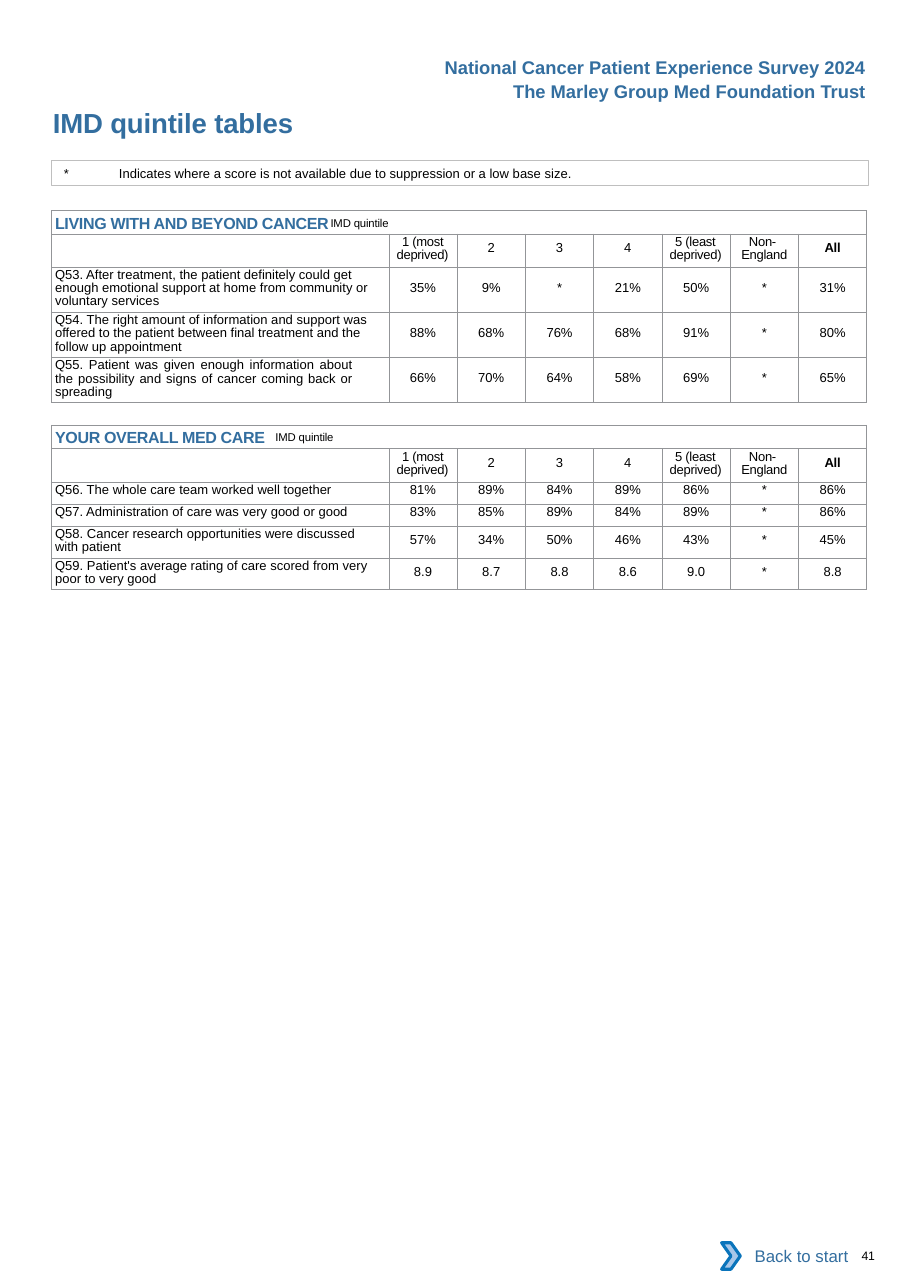
from dataclasses import dataclass

from lxml import etree
from pptx import Presentation
from pptx.dml.color import RGBColor
from pptx.enum.shapes import MSO_SHAPE
from pptx.enum.text import MSO_ANCHOR, MSO_AUTO_SIZE, PP_ALIGN
from pptx.oxml.ns import qn
from pptx.util import Inches, Pt

LEFT, CENTER, RIGHT, JUSTIFY = PP_ALIGN.LEFT, PP_ALIGN.CENTER, PP_ALIGN.RIGHT, PP_ALIGN.JUSTIFY
TOP, MIDDLE = MSO_ANCHOR.TOP, MSO_ANCHOR.MIDDLE
GROW = MSO_AUTO_SIZE.SHAPE_TO_FIT_TEXT
RECTANGLE, CHEVRON = MSO_SHAPE.RECTANGLE, MSO_SHAPE.CHEVRON


@dataclass(frozen=True)
class Theme:
    font: str = "Arial"
    blue: str = "336E9F"
    black: str = "000000"
    white: str = "FFFFFF"
    grid: str = "939598"
    note_line: str = "BFBFBF"
    chevron_fill: str = "A8C7E9"
    chevron_line: str = "0A74BB"
    title: float = 18
    heading: float = 12
    link: float = 11
    section: float = 10.5
    raised: float = 12.8
    body: float = 8.5
    page_number: float = 8
    leading: float = 8.6


THEME = Theme()
LEFT_EDGE, CONTENT_WIDTH = 0.47, 7.41
LABEL_WIDTH, SCORE_WIDTH = 3.06, 0.62
SECTION_HEIGHT, HEADER_HEIGHT = 0.21, 0.28
ROW_HEIGHTS = {1: 0.2, 2: 0.29, 3: 0.41}
SCORE_INSETS = {1: 0.01, 2: 0.06, 3: 0.12}
QUINTILES = ["1 (most deprived)", "2", "3", "4", "5 (least deprived)", "Non- England", "All"]
HEADER_INDENTS = {"1 (most deprived)": (0.07, 0.05), "5 (least deprived)": (0.07, 0.05),
                  "Non- England": (0.1, 0.07)}

LIVING_ROWS = [
    ("Q53. After treatment, the patient definitely could get enough emotional support "
     "at home from community or voluntary services", 3, LEFT, 0,
     ["35%", "9%", "*", "21%", "50%", "*", "31%"]),
    ("Q54. The right amount of information and support was offered to the patient "
     "between final treatment and the follow up appointment", 3, LEFT, 0,
     ["88%", "68%", "76%", "68%", "91%", "*", "80%"]),
    ("Q55. Patient was given enough information about the possibility and signs of "
     "cancer coming back or spreading", 3, JUSTIFY, 0.33,
     ["66%", "70%", "64%", "58%", "69%", "*", "65%"]),
]
OVERALL_ROWS = [
    ("Q56. The whole care team worked well together", 1, LEFT, 0,
     ["81%", "89%", "84%", "89%", "86%", "*", "86%"]),
    ("Q57. Administration of care was very good or good", 1, LEFT, 0,
     ["83%", "85%", "89%", "84%", "89%", "*", "86%"]),
    ("Q58. Cancer research opportunities were discussed with patient", 2, LEFT, 0.3,
     ["57%", "34%", "50%", "46%", "43%", "*", "45%"]),
    ("Q59. Patient's average rating of care scored from very poor to very good", 2, LEFT, 0,
     ["8.9", "8.7", "8.8", "8.6", "9.0", "*", "8.8"]),
]


def color(value):
    return RGBColor.from_string(value)


def add_span(para, text, size, ink=THEME.black, bold=False, tracking=0, baseline=0):
    span = para.add_run()
    span.text = text
    span.font.name = THEME.font
    span.font.size = Pt(size)
    span.font.bold = bold
    span.font.color.rgb = color(ink)
    properties = span._r.get_or_add_rPr()
    if tracking:
        properties.set("spc", str(round(tracking * 100)))
    if baseline:
        properties.set("baseline", str(baseline * 1000))


def indent(para, margin, first_line=0, tab=None):
    properties = para._p.get_or_add_pPr()
    properties.set("marL", str(Inches(margin)))
    properties.set("indent", str(Inches(first_line)))
    if tab:
        stops = etree.SubElement(properties, qn("a:tabLst"))
        etree.SubElement(stops, qn("a:tab"), pos=str(Inches(tab)), algn="l")


def set_insets(holder, top=0, bottom=0, right=0):
    holder.margin_left = 0
    holder.margin_right = Inches(right)
    holder.margin_top = Inches(top)
    holder.margin_bottom = Inches(bottom)


def place(shape, left, top, width, height):
    shape.left, shape.top = Inches(left), Inches(top)
    shape.width, shape.height = Inches(width), Inches(height)


def add_panel(shapes, kind, left, top, width, height, fill=None, line=None, weight=0.5):
    panel = shapes.add_shape(kind, Inches(left), Inches(top), Inches(width), Inches(height))
    panel.shadow.inherit = False
    if fill:
        panel.fill.solid()
        panel.fill.fore_color.rgb = color(fill)
    else:
        panel.fill.background()
    if line:
        panel.line.color.rgb = color(line)
        panel.line.width = Pt(weight)
    else:
        panel.line.fill.background()
    return panel


def add_heading(page, text, left, top, width, height):
    box = page.shapes.add_textbox(Inches(left), Inches(top), Inches(width), Inches(height))
    box.text_frame.word_wrap = False
    box.text_frame.auto_size = GROW
    para = box.text_frame.paragraphs[0]
    para.alignment = RIGHT
    add_span(para, text, THEME.heading, THEME.blue, True)


def set_title(page, text, left, top, width, height):
    title = page.shapes.title
    place(title, left, top, width, height)
    frame = title.text_frame
    set_insets(frame)
    frame.word_wrap = True
    frame.auto_size = GROW
    frame.vertical_anchor = TOP
    para = frame.paragraphs[0]
    para.alignment = LEFT
    indent(para, 0.01)
    add_span(para, text, THEME.title, THEME.blue, True, -0.1)


def add_note(page, left, top, width, height):
    note = add_panel(page.shapes, RECTANGLE, left, top, width, height, line=THEME.note_line)
    frame = note.text_frame
    set_insets(frame, 0.04, 0.04)
    frame.word_wrap = True
    frame.auto_size = GROW
    frame.vertical_anchor = TOP
    para = frame.paragraphs[0]
    para.alignment = LEFT
    indent(para, 0.11, tab=0.34)
    add_span(para, "*", THEME.body, tracking=-0.5)
    add_span(para, "\tIndicates where a score is not available due to suppression or a low base size.",
             THEME.body)


def prepare_cell(cell):
    set_insets(cell)
    cell.fill.background()
    cell.text_frame.paragraphs[0].line_spacing = Pt(THEME.leading)
    properties = cell._tc.get_or_add_tcPr()
    for position, side in enumerate(("lnL", "lnR", "lnT", "lnB")):
        border = etree.Element(qn(f"a:{side}"), w=str(Pt(0.5)))
        paint = etree.SubElement(border, qn("a:solidFill"))
        etree.SubElement(paint, qn("a:srgbClr"), val=THEME.grid)
        properties.insert(position, border)


def fill_cell(cell, text, top, align=CENTER, bold=False, tight=False, right=0, margins=None, tracking=0):
    set_insets(cell, top, right=right)
    para = cell.text_frame.paragraphs[0]
    para.alignment = align
    para.line_spacing = Pt(THEME.leading) if tight else None
    if margins:
        indent(para, *margins)
    add_span(para, text, THEME.body, bold=bold, tracking=tracking)


def add_score_table(page, section, rows, left, top):
    heights = [SECTION_HEIGHT, HEADER_HEIGHT] + [ROW_HEIGHTS[row[1]] for row in rows]
    frame = page.shapes.add_table(len(heights), len(QUINTILES) + 1, Inches(left), Inches(top),
                                  Inches(CONTENT_WIDTH), Inches(sum(heights)))
    table = frame.table
    table.first_row = table.horz_banding = False
    for index, column in enumerate(table.columns):
        column.width = Inches(SCORE_WIDTH if index else LABEL_WIDTH)
    for row, height in zip(table.rows, heights):
        row.height = Inches(height)
        for cell in row.cells:
            prepare_cell(cell)
    banner = table.cell(0, 0)
    banner.merge(table.cell(0, len(QUINTILES)))
    banner.vertical_anchor = MIDDLE
    para = banner.text_frame.paragraphs[0]
    para.line_spacing = None
    indent(para, 0.03, tab=4.72)
    add_span(para, section + "\t", THEME.section, THEME.blue, True, -0.2)
    add_span(para, "IMD quintile", THEME.raised, tracking=-0.1, baseline=10)
    for column, name in enumerate(QUINTILES, 1):
        margins = HEADER_INDENTS.get(name)
        fill_cell(table.cell(1, column), name, 0.02 if margins else 0.06, LEFT if margins else CENTER,
                  name == "All", bool(margins), margins=margins, tracking=-0.2)
    for index, (label, lines, align, right, scores) in enumerate(rows, 2):
        fill_cell(table.cell(index, 0), label, 0.02 if lines > 1 else 0.01, align,
                  tight=lines > 1, right=right, margins=(0.03,))
        for column, score in enumerate(scores, 1):
            fill_cell(table.cell(index, column), score, SCORE_INSETS[lines])


def add_footer(page, left, top):
    group = page.shapes.add_group_shape()
    link = add_panel(group.shapes, RECTANGLE, left + 0.07, top, 1.18, 0.42, THEME.white)
    link.text_frame.vertical_anchor = MIDDLE
    para = link.text_frame.paragraphs[0]
    para.alignment = RIGHT
    add_span(para, "Back to start", THEME.link, THEME.blue)
    add_panel(group.shapes, CHEVRON, left, top + 0.09, 0.17, 0.24,
              THEME.chevron_fill, THEME.chevron_line, 2)
    box = page.shapes.add_textbox(Inches(left + 1.17), Inches(top + 0.14), Inches(0.51), Inches(0.13))
    set_insets(box.text_frame)
    box.text_frame.word_wrap = True
    box.text_frame.auto_size = GROW
    para = box.text_frame.paragraphs[0]
    indent(para, 0.1)
    add_span(para, "41", THEME.page_number, tracking=-0.2)


def main():
    deck = Presentation()
    deck.slide_width, deck.slide_height = Inches(8.26), Inches(11.69)
    page = deck.slides.add_slide(deck.slide_layouts[5])
    set_title(page, "IMD quintile tables", LEFT_EDGE, 0.96, 4.5, 0.3)
    add_score_table(page, "LIVING WITH AND BEYOND CANCER", LIVING_ROWS, LEFT_EDGE, 1.91)
    add_score_table(page, "YOUR OVERALL MED CARE", OVERALL_ROWS, LEFT_EDGE, 3.86)
    add_heading(page, "The Marley Group Med Foundation Trust", 4.46, 0.68, 3.5, 0.3)
    add_heading(page, "National Cancer Patient Experience Survey 2024", 3.92, 0.46, 4.04, 0.3)
    add_note(page, LEFT_EDGE, 1.46, CONTENT_WIDTH, 0.22)
    add_footer(page, 6.55, 11.19)
    deck.save("out.pptx")


if __name__ == "__main__":
    main()
